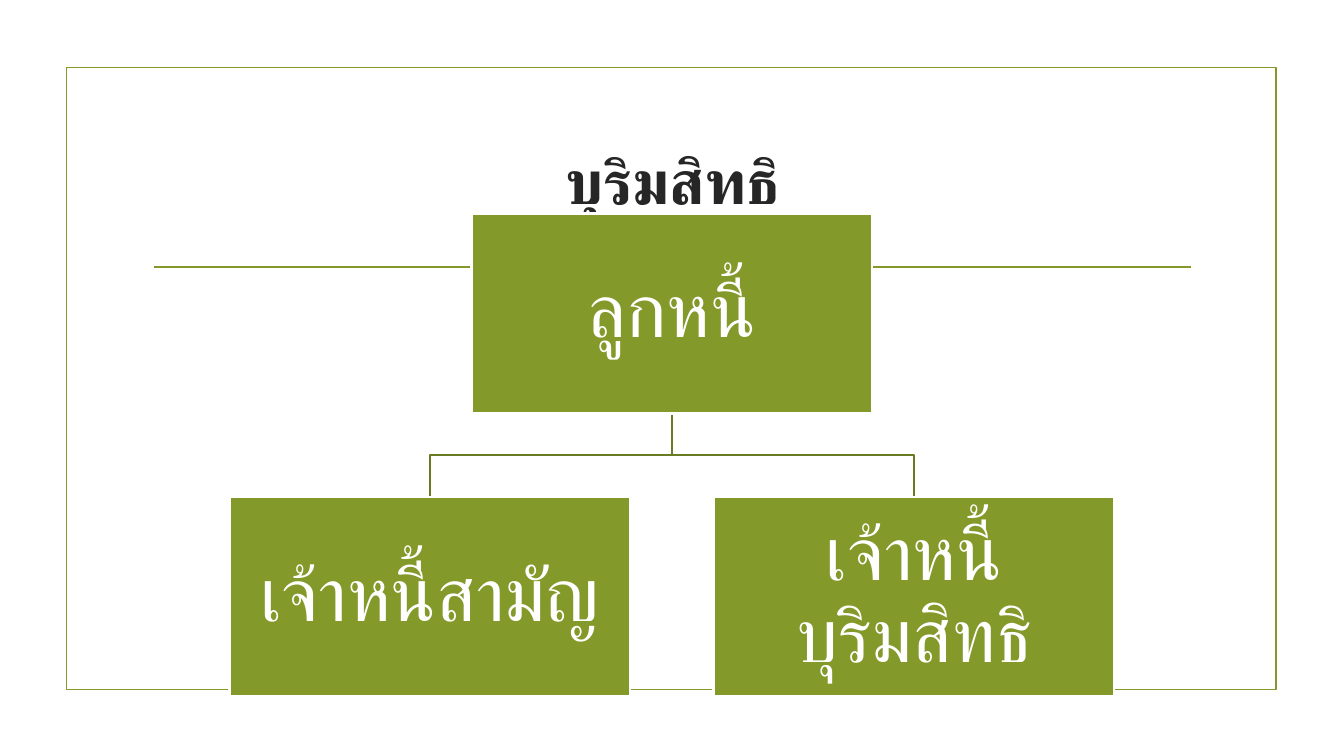
from dataclasses import dataclass

from lxml import etree
from pptx import Presentation
from pptx.dml.color import RGBColor
from pptx.enum.lang import MSO_LANGUAGE_ID
from pptx.enum.shapes import MSO_CONNECTOR, MSO_SHAPE
from pptx.enum.text import MSO_ANCHOR, MSO_AUTO_SIZE, PP_ALIGN
from pptx.oxml.ns import qn
from pptx.util import Inches, Pt

RECT, STRAIGHT = MSO_SHAPE.RECTANGLE, MSO_CONNECTOR.STRAIGHT
MIDDLE, CENTER = MSO_ANCHOR.MIDDLE, PP_ALIGN.CENTER
NO_FIT, THAI = MSO_AUTO_SIZE.NONE, MSO_LANGUAGE_ID.THAI

COLORS = {"green": "83992A", "branch": "697B22", "white": "FFFFFF", "title": "262626"}
FONT = "Times New Roman"
LINE = 1.25

# Chart grid, in inches: columns are half the distance between sibling boxes
LEFT, TOP = 2.28, 2.12
COL, ROW = 2.4, 2.81
BOX_W, BOX_H = 3.97, 1.98


@dataclass(frozen=True)
class Node:
    text: str
    col: int
    row: int

    @property
    def left(self) -> float:
        return LEFT + self.col * COL

    @property
    def top(self) -> float:
        return TOP + self.row * ROW

    @property
    def center(self) -> float:
        return self.left + BOX_W / 2


DEBTOR = Node("ลูกหนี้", 1, 0)
CREDITORS = [Node("เจ้าหนี้สามัญ", 0, 1), Node("เจ้าหนี้บุริมสิทธิ", 2, 1)]


def rgb(name: str) -> RGBColor:
    return RGBColor.from_string(COLORS[name])


def set_line(shape, color: str, width: float) -> None:
    shape.line.color.rgb = rgb(color)
    shape.line.width = Pt(width)


def write(shape, text: str, size: int, color: str, bold: bool, spacing: float, **frame) -> None:
    """Put one centred Thai paragraph in the shape; frame holds text frame values."""
    tf = shape.text_frame
    tf.text = text
    frame |= {"word_wrap": True, "auto_size": NO_FIT, "vertical_anchor": MIDDLE}
    for name, value in frame.items():
        setattr(tf, name, value)
    p = tf.paragraphs[0]
    p.alignment, p.line_spacing = CENTER, spacing
    font = p.runs[0].font
    values = {"name": FONT, "size": Pt(size), "bold": bold, "language_id": THAI}
    for name, value in values.items():
        setattr(font, name, value)
    font.color.rgb = rgb(color)
    # Thai is drawn with the complex-script font
    etree.SubElement(p.runs[0]._r.rPr, qn("a:cs")).set("typeface", FONT)


def add_rect(s, left: float, top: float, width: float, height: float):
    shape = s.shapes.add_shape(RECT, *map(Inches, (left, top, width, height)))
    shape.shadow.inherit = False
    return shape


def add_frame(s) -> None:
    frame = add_rect(s, 0.66, 0.67, 12, 6.17)
    frame.fill.background()
    set_line(frame, "green", LINE)
    rule = s.shapes.add_connector(STRAIGHT, *map(Inches, (1.53, 2.65, 11.81, 2.65)))
    set_line(rule, "green", LINE)
    etree.SubElement(rule._element.spPr, qn("a:effectLst"))


def add_title(s, text: str) -> None:
    title = s.shapes.title
    place = {"left": 1.42, "top": 1.07, "width": 10.5, "height": 1.43}
    for name, value in place.items():
        setattr(title, name, Inches(value))
    write(title, text, 44, "title", True, 1.0)


def add_branch(s, parent: Node, child: Node) -> None:
    start = parent.top + BOX_H
    middle = (start + child.top) / 2
    points = [(parent.center, middle), (child.center, middle), (child.center, child.top)]
    builder = s.shapes.build_freeform(Inches(parent.center), Inches(start))
    builder.add_line_segments([(Inches(x), Inches(y)) for x, y in points], close=False)
    branch = builder.convert_to_shape()
    branch.shadow.inherit = False
    branch.fill.background()
    set_line(branch, "branch", LINE)


def add_node(s, node: Node) -> None:
    box = add_rect(s, node.left, node.top, BOX_W, BOX_H)
    box.fill.solid()
    box.fill.fore_color.rgb = rgb("green")
    set_line(box, "white", 2)
    sides = ("left", "top", "right", "bottom")
    margins = {f"margin_{side}": Inches(0.04) for side in sides}
    write(box, node.text, 54, "white", False, 0.9, **margins)


def main() -> None:
    prs = Presentation()
    prs.slide_width, prs.slide_height = Inches(13.33), Inches(7.5)
    s = prs.slides.add_slide(prs.slide_layouts[5])
    add_frame(s)
    add_title(s, "บุริมสิทธิ")
    for creditor in CREDITORS:
        add_branch(s, DEBTOR, creditor)
    for node in [DEBTOR, *CREDITORS]:
        add_node(s, node)
    prs.save("out.pptx")


if __name__ == "__main__":
    main()
